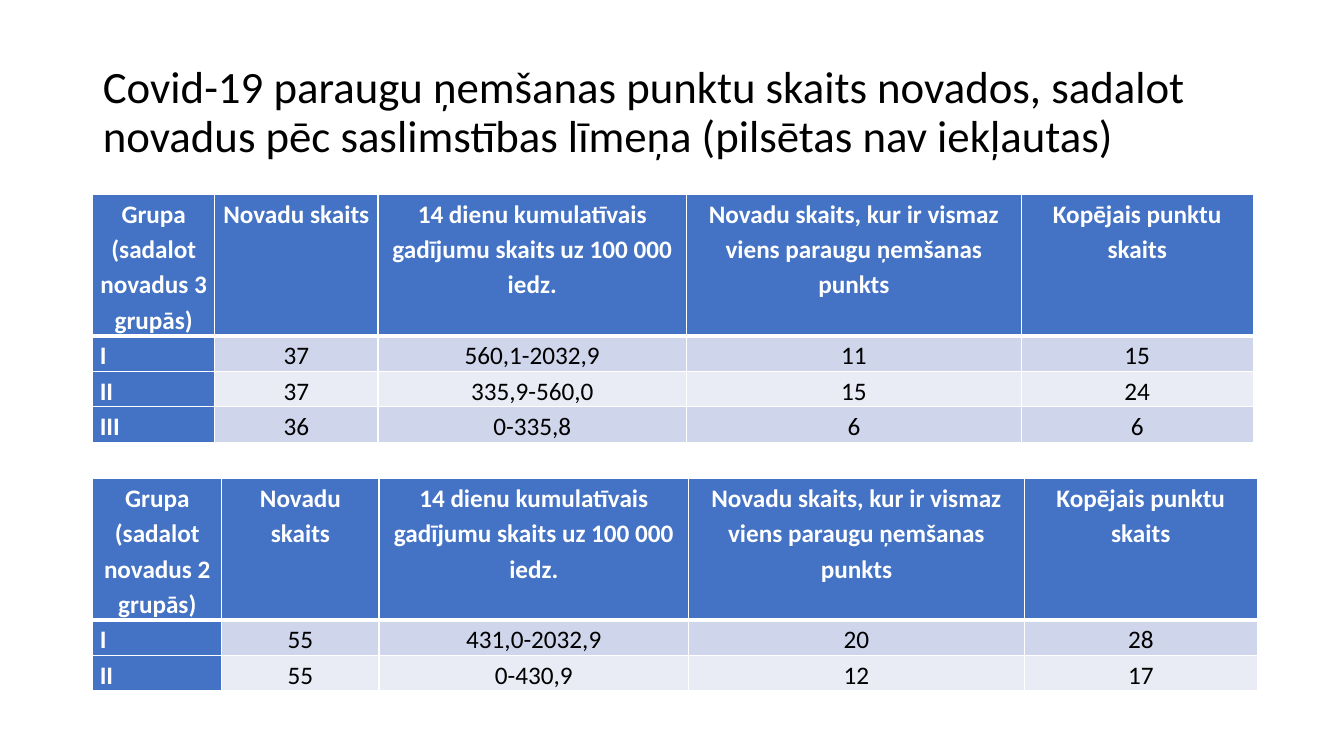
"""Builds a slide with two tables of Covid-19 sampling points by municipality group."""
from dataclasses import dataclass

from lxml import etree
from pptx import Presentation
from pptx import util as u
from pptx.dml import color
from pptx.enum import text
from pptx.oxml import ns


@dataclass(frozen=True)
class Theme:
    font: str = "Calibri"
    title_size: int = 32
    table_size: int = 18
    ink: str = "000000"
    white: str = "FFFFFF"
    accent: str = "4472C4"
    bands: tuple[str, str] = ("CFD5EA", "E9EBF5")
    thin: float = 1
    thick: float = 3


@dataclass(frozen=True)
class GroupTable:
    groups: int
    top: float
    widths: tuple[float, ...]
    rows: tuple[tuple[str, ...], ...]


THEME = Theme()
LEFT = 0.92
HEADER_HEIGHT, ROW_HEIGHT = 1.4, 0.35
TITLE = (
    "Covid-19 paraugu ņemšanas punktu skaits novados, sadalot "
    "novadus pēc saslimstības līmeņa (pilsētas nav iekļautas)"
)
HEADINGS = (
    "Novadu skaits",
    "14 dienu kumulatīvais gadījumu skaits uz 100 000 iedz.",
    "Novadu skaits, kur ir vismaz viens paraugu ņemšanas punkts",
    "Kopējais punktu skaits",
)
TABLES = (
    GroupTable(3, 1.93, (1.21, 1.62, 3.06, 3.32, 2.3), (
        ("I", "37", "560,1-2032,9", "11", "15"),
        ("II", "37", "335,9-560,0", "15", "24"),
        ("III", "36", "0-335,8", "6", "6"),
    )),
    GroupTable(2, 4.75, (1.28, 1.56, 3.07, 3.33, 2.31), (
        ("I", "55", "431,0-2032,9", "20", "28"),
        ("II", "55", "0-430,9", "12", "17"),
    )),
)


def apply(target, values: dict) -> None:
    for name, value in values.items():
        setattr(target, name, value)


def write(frame, words: str, size: int, ink: str, bold: bool, align, spacing: float) -> None:
    para = frame.paragraphs[0]
    apply(para, {"alignment": align, "line_spacing": spacing})
    span = para.add_run()
    span.text = words
    apply(span.font, {"name": THEME.font, "size": u.Pt(size), "bold": bold})
    span.font.color.rgb = color.RGBColor.from_string(ink)


def add_borders(cell, top: float, bottom: float) -> None:
    properties = cell._tc.get_or_add_tcPr()
    sides = {"lnL": THEME.thin, "lnR": THEME.thin, "lnT": top, "lnB": bottom}
    for index, (side, width) in enumerate(sides.items()):
        line = etree.Element(ns.qn(f"a:{side}"), w=str(u.Pt(width)))
        fill = etree.SubElement(line, ns.qn("a:solidFill"))
        etree.SubElement(fill, ns.qn("a:srgbClr"), val=THEME.white)
        properties.insert(index, line)


def format_cell(cell, words: str, row: int, column: int) -> None:
    strong = row == 0 or column == 0
    label = row > 0 and column == 0
    margin = u.Inches(0.07)
    apply(cell, {"margin_left": margin, "margin_right": margin,
                 "margin_top": 0, "margin_bottom": 0})
    cell.fill.solid()
    shade = THEME.accent if strong else THEME.bands[(row - 1) % 2]
    cell.fill.fore_color.rgb = color.RGBColor.from_string(shade)
    add_borders(cell, THEME.thick if row == 1 else THEME.thin,
                THEME.thick if row == 0 else THEME.thin)
    write(cell.text_frame, words, THEME.table_size,
          THEME.white if strong else THEME.ink, strong,
          text.PP_ALIGN.LEFT if label else text.PP_ALIGN.CENTER, 1.15)


def add_group_table(page, data: GroupTable) -> None:
    header = (f"Grupa (sadalot novadus {data.groups} grupās)", *HEADINGS)
    rows = (header, *data.rows)
    height = HEADER_HEIGHT + ROW_HEIGHT * len(data.rows)
    table = page.shapes.add_table(
        len(rows), len(header), u.Inches(LEFT), u.Inches(data.top),
        u.Inches(sum(data.widths)), u.Inches(height)).table
    table.first_col = True
    for column, width in zip(table.columns, data.widths):
        column.width = u.Inches(width)
    for row, values in enumerate(rows):
        table.rows[row].height = u.Inches(ROW_HEIGHT if row else HEADER_HEIGHT)
        for column, words in enumerate(values):
            format_cell(table.cell(row, column), words, row, column)


def add_title(page) -> None:
    box = page.shapes.title
    apply(box, {"left": u.Inches(LEFT), "top": u.Inches(0.4),
                "width": u.Inches(11.5), "height": u.Inches(1.45)})
    apply(box.text_frame, {"word_wrap": True, "auto_size": text.MSO_AUTO_SIZE.NONE,
                           "vertical_anchor": text.MSO_ANCHOR.MIDDLE})
    write(box.text_frame, TITLE, THEME.title_size, THEME.ink, False,
          text.PP_ALIGN.LEFT, 0.9)


def main() -> None:
    deck = Presentation()
    apply(deck, {"slide_width": u.Inches(13.33), "slide_height": u.Inches(7.5)})
    page = deck.slides.add_slide(deck.slide_layouts.get_by_name("Title Only"))
    add_title(page)
    for data in TABLES:
        add_group_table(page, data)
    deck.save("out.pptx")


if __name__ == "__main__":
    main()
